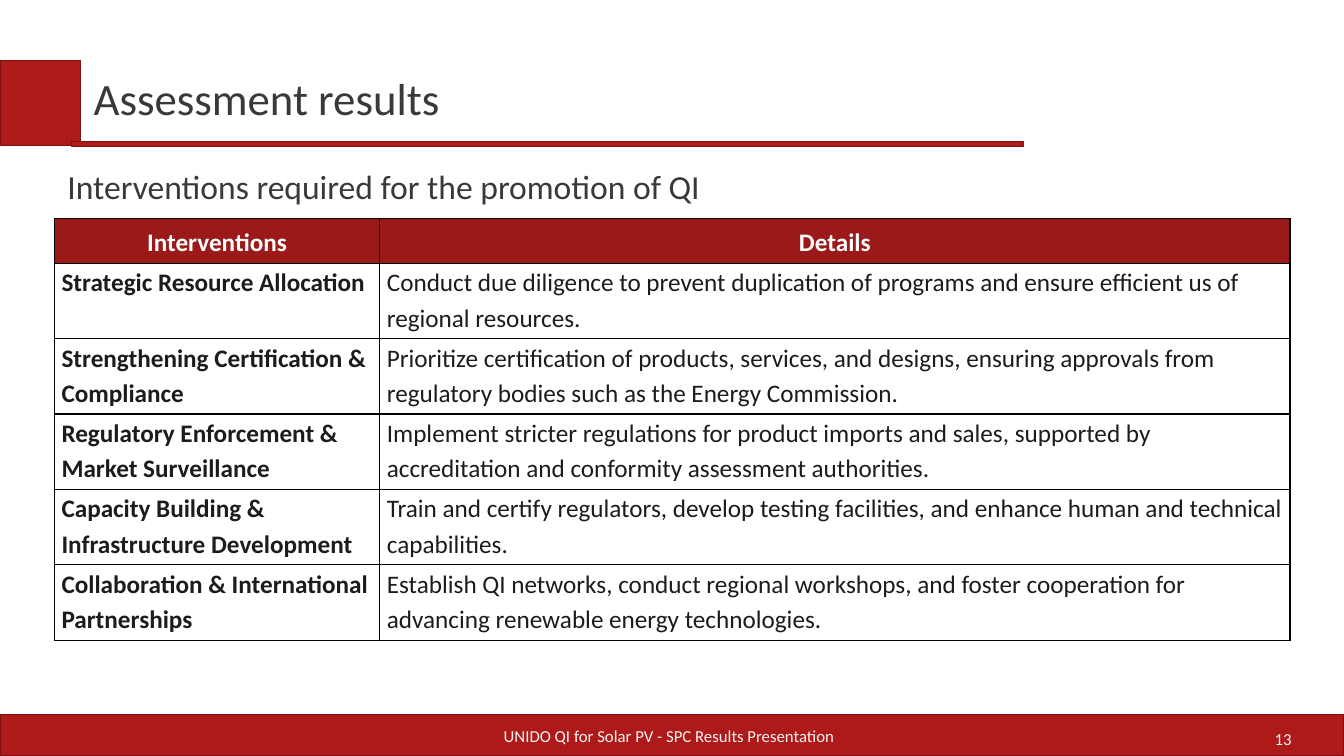
from lxml import etree
from pptx import Presentation
from pptx import util as u
from pptx.dml.color import RGBColor
from pptx.enum import shapes, text
from pptx.oxml.ns import qn

TITLE = "Assessment results"
SUBTITLE = "Interventions required for the promotion of QI"
FOOTER = "UNIDO QI for Solar PV - SPC Results Presentation"
PAGE = "13"
HEADER = ("Interventions", "Details")
INTERVENTIONS = [
    ("Strategic Resource Allocation",
     "Conduct due diligence to prevent duplication of programs and ensure "
     "efficient us of regional resources."),
    ("Strengthening Certification & Compliance",
     "Prioritize certification of products, services, and designs, ensuring "
     "approvals from regulatory bodies such as the Energy Commission."),
    ("Regulatory Enforcement & Market Surveillance",
     "Implement stricter regulations for product imports and sales, supported "
     "by accreditation and conformity assessment authorities."),
    ("Capacity Building & Infrastructure Development",
     "Train and certify regulators, develop testing facilities, and enhance "
     "human and technical capabilities."),
    ("Collaboration & International Partnerships",
     "Establish QI networks, conduct regional workshops, and foster "
     "cooperation for advancing renewable energy technologies."),
]

RED, DARK_RED, HEAD_RED = "AE1919", "7E1212", "9B1919"
WHITE, PALE, GREY, INK, BLACK = "FFFFFF", "F2F2F2", "3A3838", "1D1C1C", "000000"
SLIDE_W, SLIDE_H = 33.87, 19.05
BARS = [
    (0, 18.01, SLIDE_W, 1.03),
    (0, 1.52, 2.04, 2.15),
    (1.8, 3.56, 23.99, 0.13),
]
TABLE_X, TABLE_Y = 1.37, 5.51
COL_W = (8.2, 22.94)
HEAD_H, ROW_H = 1.12, 1.9
LEFT, CENTER, RIGHT = text.PP_ALIGN.LEFT, text.PP_ALIGN.CENTER, text.PP_ALIGN.RIGHT
TOP, MIDDLE = text.MSO_ANCHOR.TOP, text.MSO_ANCHOR.MIDDLE


def rgb(value):
    return RGBColor.from_string(value)


def write(tf, words, size=18, color=INK, bold=False, align=LEFT, spacing=1.0):
    tf.word_wrap = True
    p = tf.paragraphs[0]
    p.alignment = align
    p.line_spacing = spacing
    r = p.add_run()
    r.text = words
    r.font.name = "Calibri"
    r.font.size = u.Pt(size)
    r.font.bold = bold
    r.font.color.rgb = rgb(color)


def add_bar(s, box):
    sp = s.shapes.add_shape(shapes.MSO_SHAPE.RECTANGLE, *map(u.Cm, box))
    sp.shadow.inherit = False
    sp.fill.solid()
    sp.fill.fore_color.rgb = rgb(RED)
    sp.line.color.rgb = rgb(DARK_RED)
    sp.line.width = u.Pt(0.85)


def add_label(s, box, words, inset=(0.25, 0.25), anchor=MIDDLE, **fmt):
    tf = s.shapes.add_textbox(*map(u.Cm, box)).text_frame
    tf.margin_left = tf.margin_right = u.Cm(inset[0])
    tf.margin_top = tf.margin_bottom = u.Cm(inset[1])
    tf.vertical_anchor = anchor
    write(tf, words, **fmt)


def add_borders(cell):
    props = cell._tc.get_or_add_tcPr()
    for i, side in enumerate(("a:lnL", "a:lnR", "a:lnT", "a:lnB")):
        ln = etree.Element(qn(side), w=str(u.Pt(1)))
        fill = etree.SubElement(ln, qn("a:solidFill"))
        etree.SubElement(fill, qn("a:srgbClr"), val=BLACK)
        props.insert(i, ln)


def add_table(s):
    rows = [HEADER] + INTERVENTIONS
    heights = [HEAD_H] + [ROW_H] * len(INTERVENTIONS)
    box = (TABLE_X, TABLE_Y, sum(COL_W), sum(heights))
    table = s.shapes.add_table(len(rows), len(COL_W), *map(u.Cm, box)).table
    table.horz_banding = False
    for col, width in zip(table.columns, COL_W):
        col.width = u.Cm(width)
    for i, (row, height) in enumerate(zip(rows, heights)):
        table.rows[i].height = u.Cm(height)
        head = i == 0
        for j, words in enumerate(row):
            cell = table.cell(i, j)
            cell.margin_left = cell.margin_right = u.Cm(0.18)
            cell.margin_top = cell.margin_bottom = 0
            cell.vertical_anchor = MIDDLE if head else TOP
            cell.fill.solid()
            cell.fill.fore_color.rgb = rgb(HEAD_RED if head else WHITE)
            add_borders(cell)
            write(cell.text_frame, words, color=WHITE if head else INK,
                  bold=head or j == 0, align=CENTER if head else LEFT, spacing=1.15)


def main():
    prs = Presentation()
    prs.slide_width, prs.slide_height = u.Cm(SLIDE_W), u.Cm(SLIDE_H)
    s = prs.slides.add_slide(prs.slide_layouts[6])
    for box in BARS:
        add_bar(s, box)
    add_label(s, (24.82, 18.11, 7.98, 1.02), PAGE, inset=(0.25, 0.13),
              size=12, color=PALE, align=RIGHT)
    add_label(s, (9.17, 18.03, 15.39, 1.02), FOOTER,
              size=12, color=PALE, align=CENTER)
    add_label(s, (1.37, 3.86, 26.19, 1.9), SUBTITLE, inset=(0.33, 0.33),
              anchor=TOP, size=24, color=GREY)
    add_table(s)
    add_label(s, (2.11, 1.6, 21.29, 1.9), TITLE, size=32, color=GREY, spacing=0.9)
    prs.save("out.pptx")


if __name__ == "__main__":
    main()
